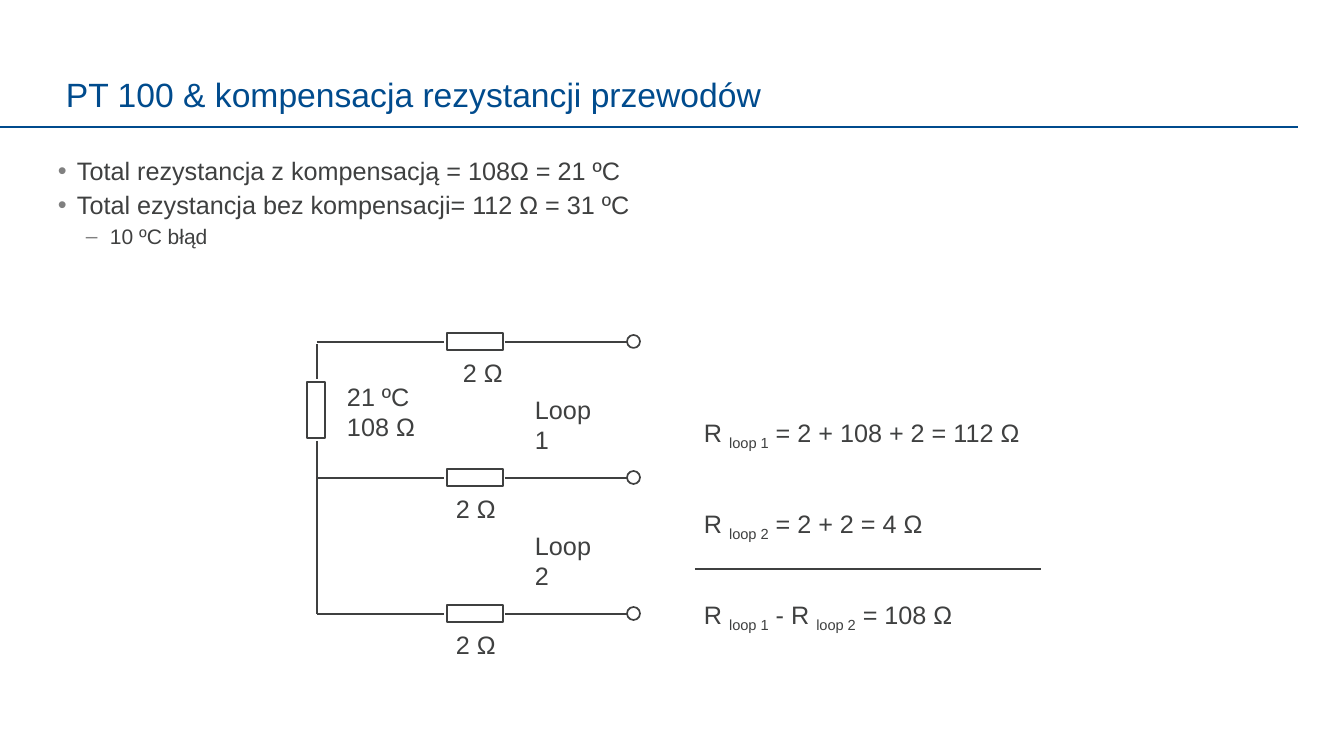
from lxml.etree import SubElement
from pptx import Presentation
from pptx.dml.color import RGBColor
from pptx.enum.shapes import MSO_CONNECTOR as Conn, MSO_SHAPE as Shape
from pptx.enum.text import MSO_ANCHOR as Anchor, MSO_AUTO_SIZE as Auto
from pptx.oxml.ns import qn
from pptx.util import Pt

SCALE = 914400 / 121
BLUE = RGBColor(0x00, 0x4B, 0x8D)
DARK = RGBColor(0x3F, 0x40, 0x40)
GRAY = RGBColor(0x80, 0x80, 0x80)
WHITE = RGBColor(0xFF, 0xFF, 0xFF)


def px(n):
    return round(n * SCALE)


def style(para, size, color=DARK):
    para.font.name = "Arial"
    para.font.size = Pt(size)
    para.font.color.rgb = color


def frame(slide, x, y, w, h, pads=(10, 5, 10, 5), wrap=True):
    box = slide.shapes.add_textbox(px(x), px(y), px(w), px(h))
    tf = box.text_frame
    tf.word_wrap = wrap
    tf.auto_size = Auto.NONE if wrap else Auto.SHAPE_TO_FIT_TEXT
    tf.margin_left, tf.margin_top, tf.margin_right, tf.margin_bottom = map(px, pads)
    return tf


def label(slide, x, y, w, h, *rows):
    tf = frame(slide, x, y, w, h, wrap=False)
    for i, text in enumerate(rows):
        para = tf.add_paragraph() if i else tf.paragraphs[0]
        para.text = text
        style(para, 15)


def line(slide, x1, y1, x2, y2, color=DARK, width=1):
    wire = slide.shapes.add_connector(Conn.STRAIGHT, px(x1), px(y1), px(x2), px(y2))
    wire.line.color.rgb = color
    wire.line.width = Pt(width)
    SubElement(wire._element.spPr, qn("a:effectLst"))


def part(slide, kind, x, y, w, h):
    item = slide.shapes.add_shape(kind, px(x), px(y), px(w), px(h))
    item.shadow.inherit = False
    item.fill.solid()
    item.fill.fore_color.rgb = WHITE
    item.line.color.rgb = DARK
    item.line.width = Pt(1)


def bullet(para, mark, left, hang):
    props = para._p.get_or_add_pPr()
    props.set("marL", str(px(left)))
    props.set("indent", str(-px(hang)))
    color = SubElement(props, qn("a:buClr"))
    SubElement(color, qn("a:srgbClr")).set("val", str(GRAY))
    SubElement(props, qn("a:buFont")).set("typeface", "Arial")
    SubElement(props, qn("a:buChar")).set("char", mark)


def header(slide, x, y, w, h):
    line(slide, 0, y + h + 3, x + w, y + h + 3, BLUE, 0.75)
    tf = frame(slide, x, y, w, h, (20, 10, 20, 10))
    tf.vertical_anchor = Anchor.BOTTOM
    para = tf.paragraphs[0]
    para.text = "PT 100 & kompensacja rezystancji przewodów"
    style(para, 20, BLUE)


def body(slide, x, y, w, h):
    tf = frame(slide, x, y, w, h, (12, 12, 12, 6))
    items = [
        ("Total rezystancja z kompensacją = 108Ω = 21 ºC", 0),
        ("Total ezystancja bez kompensacji= 112 Ω = 31 ºC", 0),
        ("10 ºC błąd", 1),
    ]
    for i, (text, level) in enumerate(items):
        para = tf.add_paragraph() if i else tf.paragraphs[0]
        para.text = text
        para.level = level
        para.line_spacing = 0.9
        para.space_before = Pt(1.9 if i else 0)
        para.space_after = Pt(1.9)
        bullet(para, *(("–", 52, 24) if level else ("•", 19, 19)))
        style(para, 12.5 if level else 15)


def circuit(slide, x, y):
    bus, step = x + 10, 136

    # Sensor and left-hand wire
    line(slide, bus, y + 2, bus, y + 37)
    line(slide, bus, y + 99, bus, y + 2 * step)
    part(slide, Shape.RECTANGLE, x, y + 40, 18, 56)
    label(slide, x + 30, y + 34, 88, 70, "21 ºC", "108 Ω")

    # Three leads, each with a resistor and a terminal
    for i, shift in enumerate((7, 0, 0)):
        row = y + i * step
        line(slide, bus, row, x + 137, row)
        line(slide, x + 198, row, x + 320, row)
        part(slide, Shape.RECTANGLE, x + 140, row - 9, 56, 17)
        part(slide, Shape.OVAL, x + 320, row - 7, 13, 13)
        label(slide, x + 139 + shift, row + 10, 60, 40, "2 Ω")

    # Loop names
    for i in range(2):
        label(slide, x + 218, y + 47 + i * step, 97, 40, f"Loop {i + 1}")


def sums(slide, x, y):
    rows = [
        (348, ["R ", "loop 1", " = 2 + 108 + 2 = 112 Ω"]),
        (246, ["R ", "loop 2", " = 2 + 2 = 4 Ω"]),
        (329, ["R ", "loop 1", " - R ", "loop 2", " = 108 Ω"]),
    ]
    for i, (w, pieces) in enumerate(rows):
        para = frame(slide, x, y + i * 91, w, 40).paragraphs[0]
        style(para, 15)
        for text in pieces:
            run = para.add_run()
            run.text = text
            if text.startswith("loop"):
                run._r.get_or_add_rPr().set("baseline", "-25000")
    line(slide, x + 1, y + 157, x + 347, y + 157)


def main():
    deck = Presentation()
    deck.slide_width, deck.slide_height = px(1344), px(756)
    slide = deck.slides.add_slide(deck.slide_layouts[6])
    header(slide, 46, 31, 1252, 93)
    body(slide, 46, 147, 1252, 517)
    circuit(slide, 307, 342)
    sums(slide, 694, 412)
    deck.save("out.pptx")


if __name__ == "__main__":
    main()
